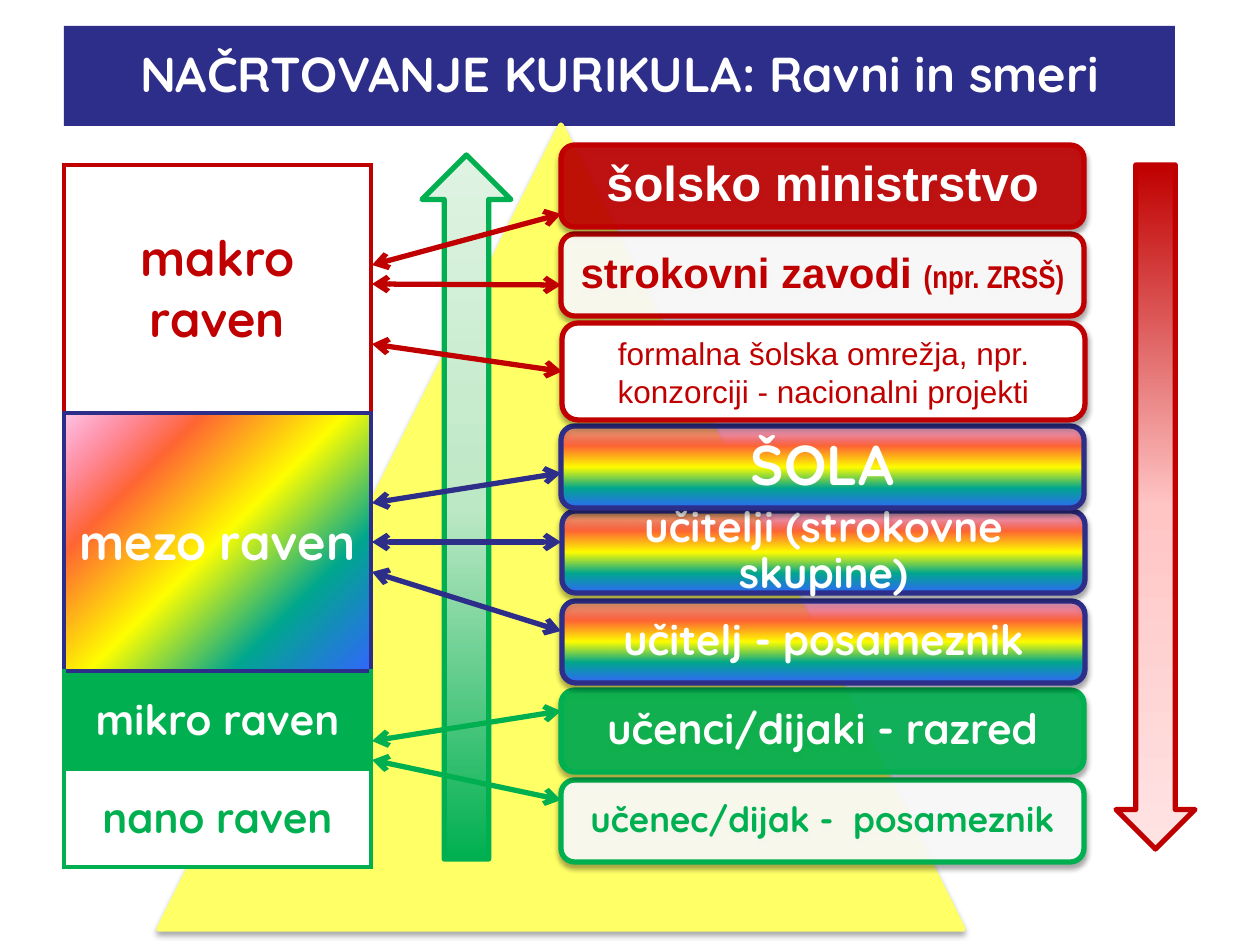
from dataclasses import dataclass

from lxml import etree
from pptx import Presentation
from pptx.dml.color import RGBColor
from pptx.enum.shapes import MSO_CONNECTOR, MSO_SHAPE
from pptx.enum.text import MSO_ANCHOR, PP_ALIGN
from pptx.oxml.ns import qn
from pptx.util import Emu, Pt

TRIANGLE = MSO_SHAPE.ISOSCELES_TRIANGLE
ROUNDED = MSO_SHAPE.ROUNDED_RECTANGLE
UP, DOWN = MSO_SHAPE.UP_ARROW, MSO_SHAPE.DOWN_ARROW
STRAIGHT = MSO_CONNECTOR.STRAIGHT
CENTER = PP_ALIGN.CENTER
TOP, MIDDLE = MSO_ANCHOR.TOP, MSO_ANCHOR.MIDDLE
EMU_PER_PX = 914400 / 126
LEFT_SIDE = 1


@dataclass(frozen=True)
class Theme:
    white: str = "FFFFFF"
    blue: str = "2D2D8A"
    red: str = "C00000"
    green: str = "00B050"
    yellow: str = "FFFF66"
    display: str = "Quicksand"
    plain: str = "Arial"
    narrow: str = "Arial Narrow"
    huge: int = 32
    large: int = 28
    medium: int = 24
    small: int = 20
    note: int = 18
    line: int = 3


THEME = Theme()


def px(value):
    return Emu(round(value * EMU_PER_PX))


def add_xml(parent, tag, **attributes):
    return etree.SubElement(parent, qn(tag), {k: str(v) for k, v in attributes.items()})


def add_color(parent, color, alpha=100):
    node = add_xml(parent, "a:srgbClr", val=color)
    if alpha < 100:
        add_xml(node, "a:alpha", val=alpha * 1000)


def rainbow(first_alpha, angle=90):
    colors = ("FF3399", "FF6633", "FFFF00", "01A78F", "3366FF")
    return [(c, 100 if i else first_alpha) for i, c in enumerate(colors)], angle


def solid(color, alpha=100):
    return [(color, alpha)], 0


def fade(*colors):
    return [(c, 100) for c in colors], 90


def paint(item, properties, fill):
    """Fill a shape or cell with evenly spaced (colour, alpha) stops; one stop is solid."""
    stops, angle = fill
    item.fill.background()
    empty = properties.find(qn("a:noFill"))
    if len(stops) == 1:
        node = etree.Element(qn("a:solidFill"))
        add_color(node, *stops[0])
    else:
        node = etree.Element(qn("a:gradFill"), rotWithShape="1")
        stop_list = add_xml(node, "a:gsLst")
        for i, stop in enumerate(stops):
            position = 100000 * i // (len(stops) - 1)
            add_color(add_xml(stop_list, "a:gs", pos=position), *stop)
        add_xml(node, "a:lin", ang=angle * 60000, scaled=0)
    properties.replace(empty, node)


def write(frame, text, *, size, color, font=THEME.display, bold=True, spacing=None):
    """Append a formatted run to the first paragraph of a text frame."""
    frame.word_wrap = True
    paragraph = frame.paragraphs[0]
    paragraph.alignment = CENTER
    if spacing:
        paragraph.line_spacing = spacing
    run = paragraph.add_run()
    run.text = text
    run.font.name, run.font.size, run.font.bold = font, Pt(size), bold
    run.font.color.rgb = RGBColor.from_string(color)


class SlideBuilder:
    def __init__(self, slide, theme):
        self.slide, self.theme = slide, theme

    def title(self, text, box):
        title = self.slide.shapes.title
        title.left, title.top, title.width, title.height = map(px, box)
        paint(title, title._element.spPr, solid(self.theme.blue))
        title.text_frame.vertical_anchor = MIDDLE
        write(title.text_frame, text, size=self.theme.large,
              color=self.theme.white, spacing=Pt(30))

    def shape(self, kind, box, fill, line, shadow=False):
        shape = self.slide.shapes.add_shape(kind, *map(px, box))
        shape.shadow.inherit = False
        properties = shape._element.spPr
        paint(shape, properties, fill)
        self.stroke(shape, line)
        if shadow:
            outer = add_xml(properties.find(qn("a:effectLst")), "a:outerShdw",
                            blurRad=Pt(3.1), dist=Pt(1.8), dir=90 * 60000, rotWithShape=0)
            add_color(outer, "000000", 35)
        return shape

    def stroke(self, item, color):
        item.line.color.rgb = RGBColor.from_string(color)
        item.line.width = Pt(self.theme.line)

    def actor(self, box, fill, line, runs, inset=(13, 13), anchor=MIDDLE, spacing=0.9):
        shape = self.shape(ROUNDED, box, fill, line, shadow=True)
        frame = shape.text_frame
        frame.margin_left = frame.margin_right = px(inset[0])
        frame.margin_top = frame.margin_bottom = px(inset[1])
        frame.vertical_anchor = anchor
        for text, style in runs:
            write(frame, text, spacing=spacing, **style)
        return shape

    def levels(self, box, rows, edges):
        """Stack the levels; edges holds the colours of the horizontal rules."""
        table = self.slide.shapes.add_table(len(rows), 1, *map(px, box)).table
        table.first_row = table.horz_banding = False
        for i, (text, height, size, color, fill, side) in enumerate(rows):
            table.rows[i].height = px(height)
            cell = table.cell(i, 0)
            cell.vertical_anchor = MIDDLE
            write(cell.text_frame, text, size=size, color=color)
            properties = cell._tc.get_or_add_tcPr()
            paint(cell, properties, fill)
            borders = {"L": side, "R": side, "T": edges[i], "B": edges[i + 1]}
            for position, (name, border) in enumerate(borders.items()):
                line = etree.Element(qn(f"a:ln{name}"), w=str(Pt(self.theme.line)))
                add_color(add_xml(line, "a:solidFill"), border)
                properties.insert(position, line)

    def link(self, start, end, color, target=None):
        link = self.slide.shapes.add_connector(STRAIGHT, *map(px, start + end))
        if target is not None:
            link.end_connect(target, LEFT_SIDE)
        self.stroke(link, color)
        for tag in ("a:headEnd", "a:tailEnd"):
            add_xml(link.line._get_or_add_ln(), tag, type="arrow")
        add_xml(link._element.spPr, "a:effectLst")


def main():
    t = THEME
    deck = Presentation()
    deck.slide_width, deck.slide_height = px(1260), px(945)
    page = SlideBuilder(deck.slides.add_slide(deck.slide_layouts[5]), t)

    page.title("NAČRTOVANJE KURIKULA: Ravni in smeri", (64, 26, 1111, 100))
    page.shape(TRIANGLE, (159, 125, 804, 804), solid(t.yellow), t.yellow, shadow=True)

    on_color = {"size": t.medium, "color": t.white}
    actors = [
        (561, 780, solid(t.white, 90), t.green, 10,
         [("učenec/dijak -  posameznik", {"size": t.small, "color": t.green})]),
        (561, 690, solid(t.green, 90), t.green, 13, [("učenci/dijaki - razred", on_color)]),
        (562, 601, rainbow(22), t.blue, 13, [("učitelj - posameznik", on_color)]),
        (562, 511, rainbow(17), t.blue, 13, [("učitelji (strokovne skupine)", on_color)]),
        (561, 426, rainbow(19), t.blue, 16, [("ŠOLA", {**on_color, "size": t.huge})]),
        (561, 234, solid(t.white, 90), t.red, 13,
         [("strokovni zavodi ", {"size": t.medium, "color": t.red, "font": t.plain}),
          ("(npr. ZRSŠ)", {"size": t.note, "color": t.red, "font": t.narrow})]),
        (561, 145, solid(t.red, 90), t.red, 15,
         [("šolsko ministrstvo", {"size": t.large, "color": t.white, "font": t.plain})]),
    ]
    for left, top, fill, line, inset, runs in actors:
        page.actor((left, top, 523, 82), fill, line, runs, inset=(inset, inset))
    networks = page.actor(
        (562, 323, 523, 97), solid(t.white), t.red,
        [("formalna šolska omrežja, npr. konzorciji - nacionalni projekti",
          {"size": t.note, "color": t.red, "font": t.plain, "bold": False})],
        inset=(13, 6), anchor=TOP, spacing=1.0)

    page.shape(DOWN, (1116, 165, 79, 684), fade(t.red, "FFC5C5", "FFE3E3"), t.red)
    page.shape(UP, (422, 155, 89, 704), fade("DFF3E3", "BDE8C5", t.green), t.green)

    page.levels((64, 165, 307, 702), [
        ("makro raven", 248, t.large, t.red, solid(t.white), t.red),
        ("mezo raven", 258, t.large, t.white, rainbow(27, 45), t.blue),
        ("mikro raven", 98, t.medium, t.white, solid(t.green), t.green),
        ("nano raven", 98, t.medium, t.green, solid(t.white), t.green),
    ], edges=(t.red, t.blue, t.blue, t.green, t.green))

    for level_y, actor_y, color, target in (
        (265, 214, t.red, None), (284, 285, t.red, None), (344, 372, t.red, networks),
        (503, 473, t.blue, None), (542, 542, t.blue, None), (572, 631, t.blue, None),
        (741, 711, t.green, None), (760, 800, t.green, None),
    ):
        page.link((372, level_y), (561, actor_y), color, target)

    deck.save("out.pptx")


if __name__ == "__main__":
    main()
